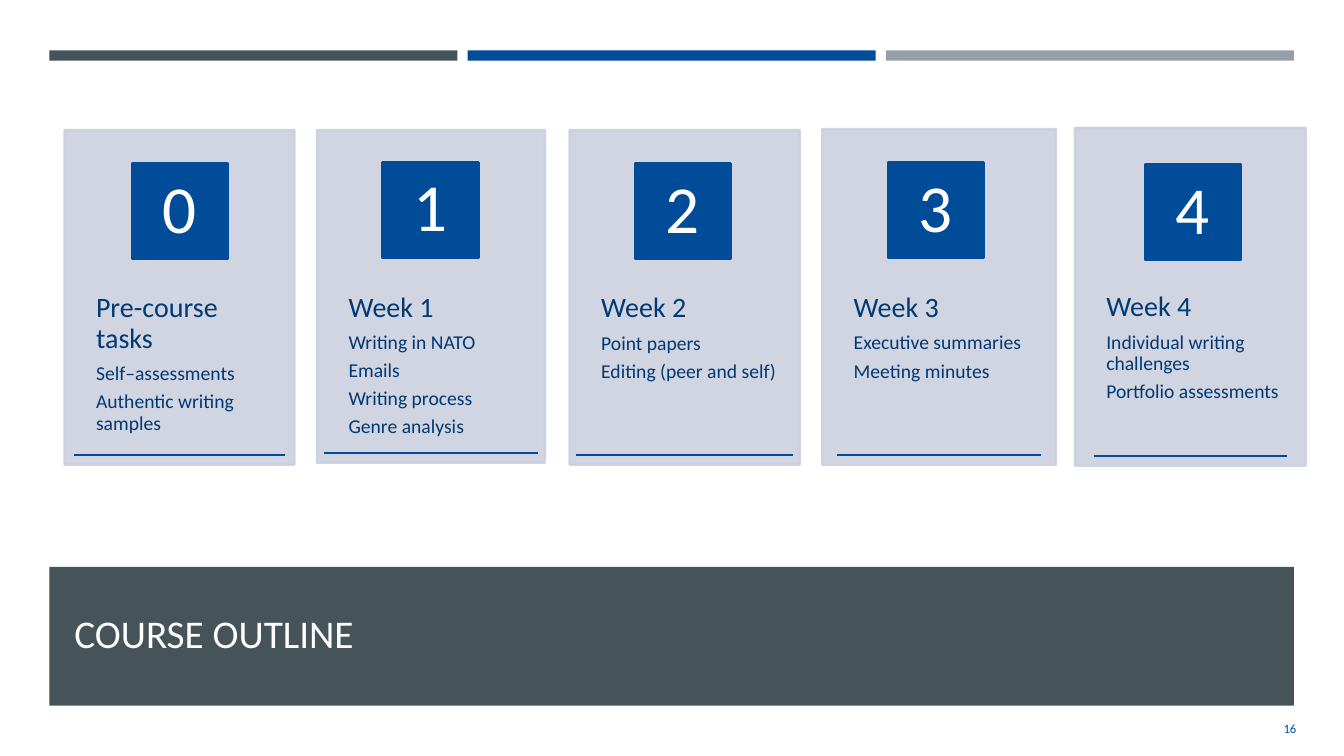
from pptx import Presentation
from pptx.dml.color import RGBColor
from pptx.enum.shapes import MSO_CONNECTOR, MSO_SHAPE
from pptx.enum.text import MSO_ANCHOR, MSO_AUTO_SIZE, PP_ALIGN
from pptx.oxml.ns import qn
from pptx.util import Pt
from lxml.etree import SubElement

SLATE = RGBColor(0x46, 0x53, 0x59)
BLUE = RGBColor(0x00, 0x4C, 0x99)
GREY = RGBColor(0x96, 0x9F, 0xA7)
LAVENDER = RGBColor(0xCC, 0xD0, 0xDE)
NAVY = RGBColor(0x00, 0x39, 0x73)
WHITE = RGBColor(0xFF, 0xFF, 0xFF)
IVORY = RGBColor(0xFF, 0xFE, 0xFF)

FRAME = {"word_wrap": True, "auto_size": MSO_AUTO_SIZE.NONE}
MIDDLE = {**FRAME, "vertical_anchor": MSO_ANCHOR.MIDDLE}
BADGE_FRAME = {**MIDDLE, "margin_left": Pt(5), "margin_right": Pt(5),
               "margin_top": Pt(1), "margin_bottom": Pt(1)}
AGENDA_FRAME = {**FRAME, "vertical_anchor": MSO_ANCHOR.TOP,
                "margin_left": Pt(22.5), "margin_right": Pt(13),
                "margin_top": Pt(26), "margin_bottom": Pt(26)}

CARD_LEFT, CARD_PITCH = 46.1, 180.4
BADGE_SIDE = 68.4
WEEKS = [
    (92.9, 164.2, 239, 48.2, 23.8, 6.5,
     ["Pre-course tasks", "Self–assessments", "Authentic writing samples"]),
    (92.9, 162.7, 237.6, 46.8, 23, 5,
     ["Week 1", "Writing in NATO", "Emails", "Writing process", "Genre analysis"]),
    (92.9, 164.2, 239, 46.6, 23.8, 4.3,
     ["Week 2", "Point papers", "Editing (peer and self)"]),
    (92.2, 167, 239.8, 46.9, 23.8, 10.4,
     ["Week 3", "Executive summaries", "Meeting minutes"]),
    (91.4, 164.9, 241.2, 50.2, 26, 13.4,
     ["Week 4", "Individual writing challenges", "Portfolio assessments"]),
]


def apply_format(target, values):
    for attribute, value in values.items():
        setattr(target, attribute, value)


def write(paragraph, words, size, color, **layout):
    apply_format(paragraph, layout)
    run = paragraph.add_run()
    run.text = words
    apply_format(run.font, {"name": "Calibri", "size": Pt(size)})
    run.font.color.rgb = color


def add_panel(slide, left, top, width, height, color, outlined=False):
    panel = slide.shapes.add_shape(MSO_SHAPE.RECTANGLE, Pt(left), Pt(top),
                                   Pt(width), Pt(height))
    panel.shadow.inherit = False
    panel.fill.solid()
    panel.fill.fore_color.rgb = color
    if outlined:
        panel.line.color.rgb = color
        panel.line.width = Pt(1.75)
    else:
        panel.line.fill.background()
    return panel


def add_top_bars(slide, left, top, width, height, gap):
    bar_width = (width - 2 * gap) / 3
    for position, color in enumerate((SLATE, BLUE, GREY)):
        add_panel(slide, left + position * (bar_width + gap), top,
                  bar_width, height, color)


def add_title_band(slide, left, top, width, height):
    band = add_panel(slide, left, top, width, height, SLATE)
    title = slide.shapes.title
    band.element.addnext(title.element)
    apply_format(title, {"left": Pt(left + 10.7), "top": Pt(top + 8),
                         "width": Pt(width - 21), "height": Pt(height - 21.5)})
    apply_format(title.text_frame, MIDDLE)
    write(title.text_frame.paragraphs[0], "COURSE OUTLINE", 28, IVORY,
          alignment=PP_ALIGN.LEFT)


def add_page_number(slide, left, top, width, height):
    page = slide.shapes.add_textbox(Pt(left), Pt(top), Pt(width), Pt(height))
    apply_format(page.text_frame, MIDDLE)
    write(page.text_frame.paragraphs[0], "16", 9, BLUE,
          alignment=PP_ALIGN.RIGHT, space_after=Pt(6))


def add_agenda(slide, left, top, width, height, entries):
    agenda = slide.shapes.add_textbox(Pt(left), Pt(top), Pt(width), Pt(height))
    frame = agenda.text_frame
    apply_format(frame, AGENDA_FRAME)
    for position, entry in enumerate(entries):
        paragraph = frame.add_paragraph() if position else frame.paragraphs[0]
        size = 14 if position else 20
        write(paragraph, entry, size, NAVY,
              line_spacing=0.9, space_after=Pt(size * 0.35))


def add_rule(slide, left, right, y):
    rule = slide.shapes.add_connector(MSO_CONNECTOR.STRAIGHT, Pt(left), Pt(y),
                                      Pt(right), Pt(y))
    rule.line.color.rgb = BLUE
    rule.line.width = Pt(1.75)
    SubElement(rule.element.spPr, qn("a:effectLst"))


def add_week_card(slide, left, top, width, height, number, badge_x, badge_y,
                  rule_inset, entries):
    card = add_panel(slide, left, top, width, height, LAVENDER, outlined=True)
    for tint in card.element.spPr.iter(qn("a:srgbClr")):
        SubElement(tint, qn("a:alpha"), val="90000")
    add_agenda(slide, left, top + height * 0.38, width, height * 0.6, entries)
    badge = add_panel(slide, left + badge_x, top + badge_y,
                      BADGE_SIDE, BADGE_SIDE, BLUE, outlined=True)
    apply_format(badge.text_frame, BADGE_FRAME)
    write(badge.text_frame.paragraphs[0], str(number), 48, WHITE,
          alignment=PP_ALIGN.CENTER, line_spacing=0.9, space_after=Pt(16.8))
    add_rule(slide, left + rule_inset, left + width - rule_inset,
             top + height - 6.8)


def add_outline_slide(deck):
    slide = deck.slides.add_slide(deck.slide_layouts[5])
    slide.background.fill.solid()
    slide.background.fill.fore_color.rgb = WHITE
    add_title_band(slide, 35.3, 404.9, 889, 99.2)
    add_top_bars(slide, 35.3, 36, 889, 7.4, 7.4)
    add_page_number(slide, 850.3, 506.2, 82.8, 28.8)
    for number, week in enumerate(WEEKS):
        top, width, height, badge_x, badge_y, rule_inset, entries = week
        add_week_card(slide, CARD_LEFT + number * CARD_PITCH, top, width, height,
                      number, badge_x, badge_y, rule_inset, entries)


def main():
    deck = Presentation()
    apply_format(deck, {"slide_width": Pt(960), "slide_height": Pt(540)})
    add_outline_slide(deck)
    deck.save("out.pptx")


if __name__ == "__main__":
    main()
